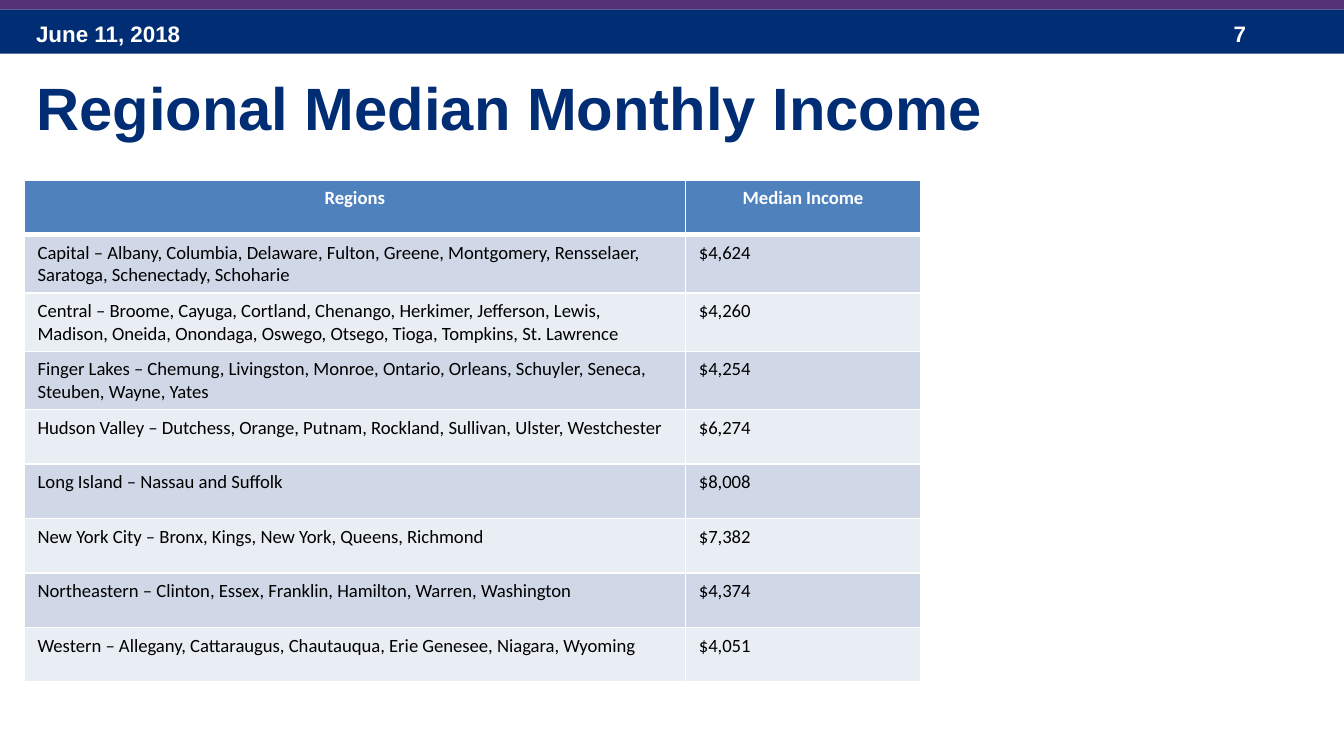
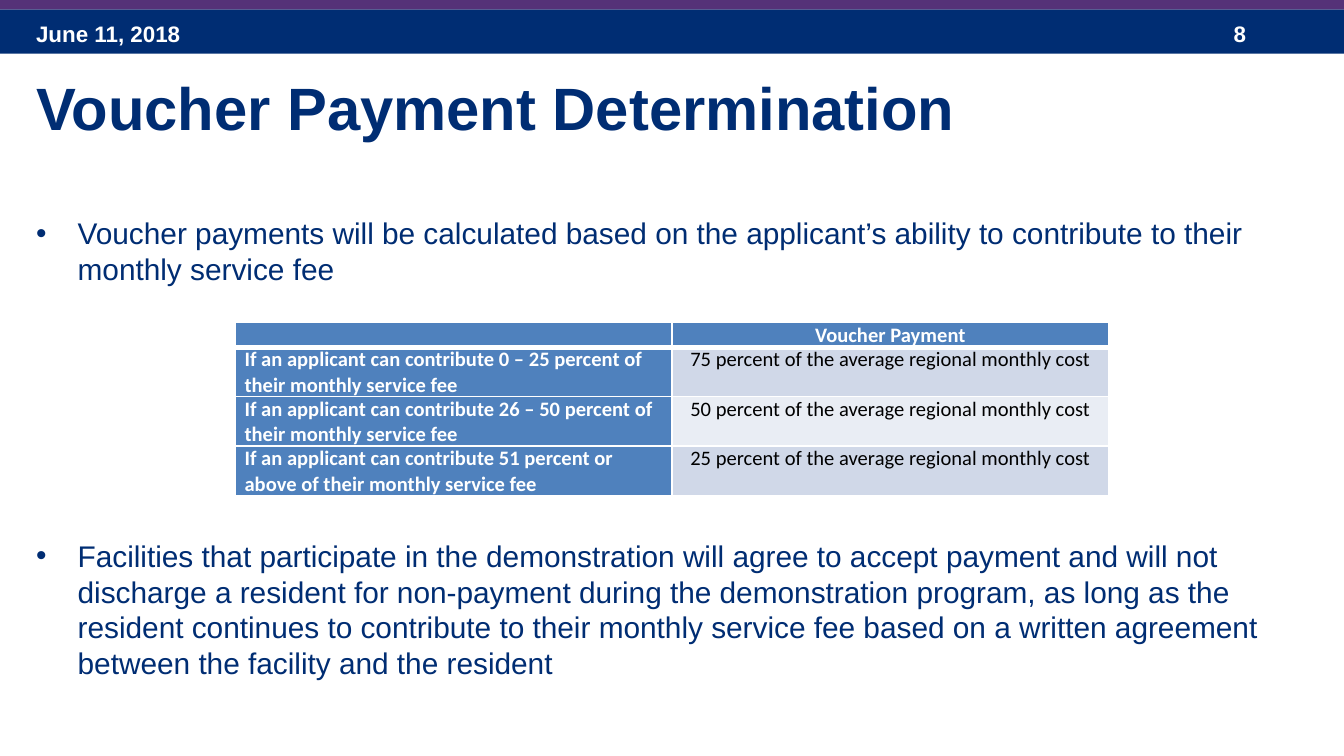
"""Builds two slides on regional incomes and voucher payments."""
from dataclasses import dataclass

from lxml import etree
from pptx import Presentation
from pptx import util as u
from pptx.dml.color import RGBColor
from pptx.enum import shapes, text
from pptx.oxml import ns


@dataclass(frozen=True)
class Theme:
    navy: str = "002D73"
    purple: str = "553278"
    white: str = "FFFFFF"
    black: str = "000000"
    header: str = "4F81BD"
    stripes: tuple = ("D0D8E8", "E9EDF4")
    heading_font: str = "Arial"
    table_font: str = "Calibri"
    title_size: int = 32
    body_size: int = 16
    band_size: int = 12
    rule: int = 1
    header_rule: int = 3


class Deck:
    def __init__(self, theme):
        self.theme = theme
        self.prs = Presentation()
        self.prs.slide_width = u.Inches(10)
        self.prs.slide_height = u.Inches(10 * 9 / 16)
        self.slide = None

    def style(self, paragraph, size, color, bold=False, font=None):
        paragraph.font.size = u.Pt(size)
        paragraph.font.bold = bold
        paragraph.font.name = font or self.theme.heading_font
        paragraph.font.color.rgb = RGBColor.from_string(color)

    def new_slide(self, title, date, number):
        self.slide = self.prs.slides.add_slide(self.prs.slide_layouts[5])
        self.band(0.07, 0.33, self.theme.navy)
        self.band(0, 0.07, self.theme.purple)
        for label, left, width in ((date, 0.17, 2.33), (str(number), 9.08, 0.75)):
            paragraph = self.text_box(label, left, 0.1, width, 0.3, text.MSO_ANCHOR.MIDDLE)
            self.style(paragraph, self.theme.band_size, self.theme.white, True)
        self.title(title)

    def band(self, top, height, color):
        band = self.slide.shapes.add_shape(
            shapes.MSO_SHAPE.RECTANGLE, 0, u.Inches(top), u.Inches(10), u.Inches(height))
        band.shadow.inherit = False
        band.fill.solid()
        band.fill.fore_color.rgb = RGBColor.from_string(color)
        band.line.fill.background()

    def text_box(self, words, left, top, width, height, anchor=text.MSO_ANCHOR.TOP):
        box = self.slide.shapes.add_textbox(*map(u.Inches, (left, top, width, height)))
        frame = box.text_frame
        frame.word_wrap = True
        frame.vertical_anchor = anchor
        frame.text = words
        return frame.paragraphs[0]

    def title(self, words):
        title = self.slide.shapes.title
        title.left, title.top, title.width, title.height = map(
            u.Inches, (0.17, 0.48, 9.5, 0.65))
        frame = title.text_frame
        frame.text = words
        frame.auto_size = text.MSO_AUTO_SIZE.NONE
        frame.vertical_anchor = text.MSO_ANCHOR.TOP
        paragraph = frame.paragraphs[0]
        paragraph.alignment = text.PP_ALIGN.LEFT
        self.style(paragraph, self.theme.title_size, self.theme.navy, True)

    def bullet(self, words, top, height):
        paragraph = self.text_box(words, 0.17, top, 9.5, height)
        props = paragraph._p.get_or_add_pPr()
        props.set("marL", str(u.Inches(0.31)))
        props.set("indent", str(-u.Inches(0.31)))
        etree.SubElement(props, ns.qn("a:buFont"), typeface=self.theme.heading_font)
        etree.SubElement(props, ns.qn("a:buChar"), char="•")
        self.style(paragraph, self.theme.body_size, self.theme.navy)

    def borders(self, cell, row):
        top = self.theme.header_rule if row == 1 else self.theme.rule
        bottom = self.theme.header_rule if row == 0 else self.theme.rule
        props = cell._tc.get_or_add_tcPr()
        widths = {"L": self.theme.rule, "R": self.theme.rule, "T": top, "B": bottom}
        for side, width in widths.items():
            line = etree.SubElement(props, ns.qn(f"a:ln{side}"), w=str(u.Pt(width)))
            fill = etree.SubElement(line, ns.qn("a:solidFill"))
            etree.SubElement(fill, ns.qn("a:srgbClr"), val=self.theme.white)

    def table(self, rows, left, top, widths, heights, size,
              margins=(0.1, 0.05), first_col=False, centred_values=False):
        frame = self.slide.shapes.add_table(
            len(rows), len(widths),
            *map(u.Inches, (left, top, sum(widths), sum(heights))))
        table = frame.table
        table.first_col = first_col
        for column, width in zip(table.columns, widths):
            column.width = u.Inches(width)
        for r, (row, height) in enumerate(zip(rows, heights)):
            table.rows[r].height = u.Inches(height)
            for c, words in enumerate(row):
                cell = table.cell(r, c)
                heading = r == 0 or (first_col and c == 0)
                cell.margin_left = cell.margin_right = u.Inches(margins[0])
                cell.margin_top = cell.margin_bottom = u.Inches(margins[1])
                self.borders(cell, r)
                cell.fill.solid()
                cell.fill.fore_color.rgb = RGBColor.from_string(
                    self.theme.header if heading else self.theme.stripes[(r - 1) % 2])
                if words:
                    cell.text = words
                paragraph = cell.text_frame.paragraphs[0]
                if not words:
                    paragraph._p.get_or_add_endParaRPr().set("sz", str(size * 100))
                centred = r == 0 or (centred_values and c > 0)
                paragraph.alignment = (
                    text.PP_ALIGN.CENTER if centred else text.PP_ALIGN.LEFT)
                self.style(paragraph, size,
                           self.theme.white if heading else self.theme.black,
                           heading, self.theme.table_font)


DATE = "June 11, 2018"

INCOMES = [
    ("Regions", "Median Income"),
    ("Capital – Albany, Columbia, Delaware, Fulton, Greene, Montgomery, Rensselaer, "
     "Saratoga, Schenectady, Schoharie", "$4,624"),
    ("Central – Broome, Cayuga, Cortland, Chenango, Herkimer, Jefferson, Lewis, "
     "Madison, Oneida, Onondaga, Oswego, Otsego, Tioga, Tompkins, St. Lawrence", "$4,260"),
    ("Finger Lakes – Chemung, Livingston, Monroe, Ontario, Orleans, Schuyler, Seneca, "
     "Steuben, Wayne, Yates", "$4,254"),
    ("Hudson Valley – Dutchess, Orange, Putnam, Rockland, Sullivan, Ulster, Westchester",
     "$6,274"),
    ("Long Island – Nassau and Suffolk", "$8,008"),
    ("New York City – Bronx, Kings, New York, Queens, Richmond", "$7,382"),
    ("Northeastern – Clinton, Essex, Franklin, Hamilton, Warren, Washington", "$4,374"),
    ("Western – Allegany, Cattaraugus, Chautauqua, Erie Genesee, Niagara, Wyoming", "$4,051"),
]

VOUCHERS = [("", "Voucher Payment")] + [
    (f"If an applicant can contribute {share} of their monthly service fee",
     f"{payment} percent of the average regional monthly cost")
    for share, payment in (
        ("0 – 25 percent", 75), ("26 – 50 percent", 50), ("51 percent or above", 25))
]


def main():
    deck = Deck(Theme())

    deck.new_slide("Regional Median Monthly Income", DATE, 7)
    deck.table(INCOMES, 0.18, 1.34, (4.92, 1.75), [3.65 / 9] * 9, size=10)

    deck.new_slide("Voucher Payment Determination", DATE, 8)
    deck.bullet("Voucher payments will be calculated based on the applicant’s ability to "
                "contribute to their monthly service fee", 1.55, 0.65)
    deck.table(VOUCHERS, 1.75, 2.4, (3.25, 3.25), [0.18] + [0.36] * 3, size=11,
               margins=(0.07, 0), first_col=True, centred_values=True)
    deck.bullet("Facilities that participate in the demonstration will agree to accept "
                "payment and will not discharge a resident for non-payment during the "
                "demonstration program, as long as the resident continues to contribute "
                "to their monthly service fee based on a written agreement between the "
                "facility and the resident", 3.95, 1.2)

    deck.prs.save("out.pptx")


if __name__ == "__main__":
    main()
